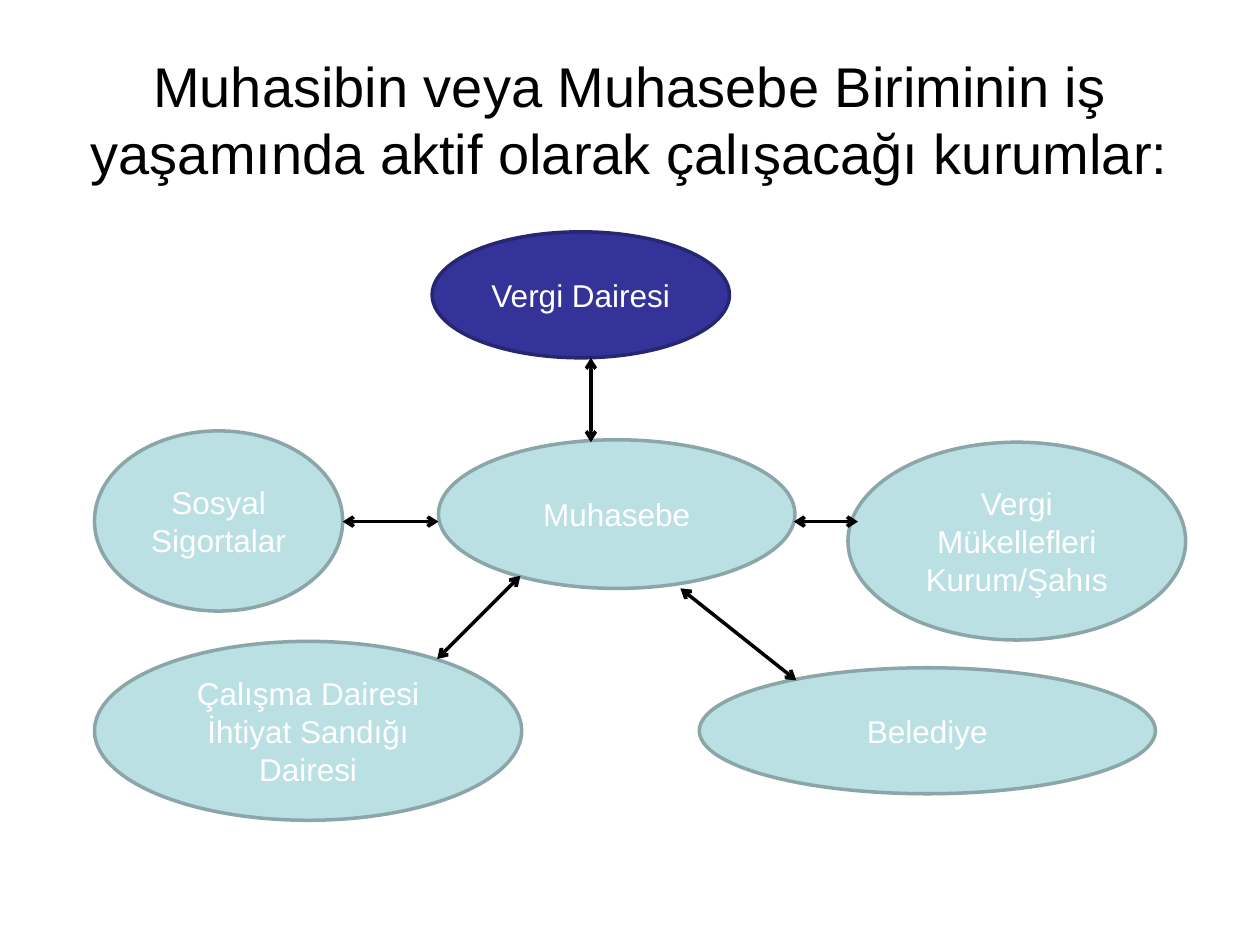
from dataclasses import dataclass

from lxml.etree import SubElement
from pptx import Presentation
from pptx.dml.color import RGBColor
from pptx.enum.shapes import MSO_CONNECTOR, MSO_SHAPE
from pptx.enum.text import MSO_ANCHOR, PP_ALIGN
from pptx.oxml.ns import qn
from pptx.util import Pt

PX = 9144  # EMU per px, 100 px to the inch


@dataclass(frozen=True)
class Theme:
    font: str = "Arial"
    head: int = 32
    body: int = 18
    line: int = 2
    ink: str = "000000"
    label: str = "FFFFFF"
    pale: tuple = ("BBE0E3", "8AA6A8")
    deep: tuple = ("333399", "262671")


class Board:
    """Holds the theme and the slide being drawn."""

    def __init__(self, slide, theme):
        self.slide = slide
        self.theme = theme

    def words(self, frame, lines, size, color, anchor):
        """Fill a text frame with centred paragraphs."""
        frame.word_wrap = True
        frame.vertical_anchor = anchor
        frame.text = "\n".join(lines)
        for para in frame.paragraphs:
            para.alignment = PP_ALIGN.CENTER
            para.font.name = self.theme.font
            para.font.size = Pt(size)
            para.font.color.rgb = RGBColor.from_string(color)

    def title(self, text, *area):
        box = self.slide.shapes.add_textbox(*(n * PX for n in area))
        self.words(box.text_frame, [text], self.theme.head,
                   self.theme.ink, MSO_ANCHOR.TOP)

    def oval(self, lines, area, tone):
        fill, edge = tone
        shape = self.slide.shapes.add_shape(
            MSO_SHAPE.OVAL, *(n * PX for n in area))
        shape.shadow.inherit = False
        shape.fill.solid()
        shape.fill.fore_color.rgb = RGBColor.from_string(fill)
        shape.line.color.rgb = RGBColor.from_string(edge)
        shape.line.width = Pt(self.theme.line)
        self.words(shape.text_frame, lines, self.theme.body,
                   self.theme.label, MSO_ANCHOR.MIDDLE)

    def arrow(self, *ends):
        """Draw a line with an open arrowhead at both ends."""
        link = self.slide.shapes.add_connector(
            MSO_CONNECTOR.STRAIGHT, *(n * PX for n in ends))
        link.line.color.rgb = RGBColor.from_string(self.theme.ink)
        link.line.width = Pt(self.theme.line)
        props = link._element.spPr
        stroke = props.find(qn("a:ln"))
        for tag in ("a:headEnd", "a:tailEnd"):
            SubElement(stroke, qn(tag), type="arrow")
        SubElement(props, qn("a:effectLst"))


def main():
    deck = Presentation()
    deck.slide_width, deck.slide_height = 1000 * PX, 750 * PX
    theme = Theme()
    board = Board(deck.slides.add_slide(deck.slide_layouts[6]), theme)

    board.title("Muhasibin veya Muhasebe Biriminin iş yaşamında "
                "aktif olarak çalışacağı kurumlar:", 50, 36, 900, 155)

    ovals = [
        (["Muhasebe"], (348, 349, 283, 118), theme.pale),
        (["Vergi Dairesi"], (343, 184, 236, 100), theme.deep),
        (["Sosyal Sigortalar"], (75, 342, 197, 143), theme.pale),
        (["Vergi Mükellefleri", "Kurum/Şahıs"],
         (673, 351, 268, 157), theme.pale),
        (["Çalışma Dairesi", "İhtiyat Sandığı Dairesi"],
         (75, 509, 339, 142), theme.pale),
        (["Belediye"], (555, 530, 362, 100), theme.pale),
    ]
    for lines, area, tone in ovals:
        board.oval(lines, area, tone)

    arrows = [
        (272, 414, 348, 414),
        (469, 284, 469, 351),
        (347, 523, 413, 457),
        (540, 467, 632, 540),
        (630, 414, 681, 414),
    ]
    for ends in arrows:
        board.arrow(*ends)

    deck.save("out.pptx")


if __name__ == "__main__":
    main()
